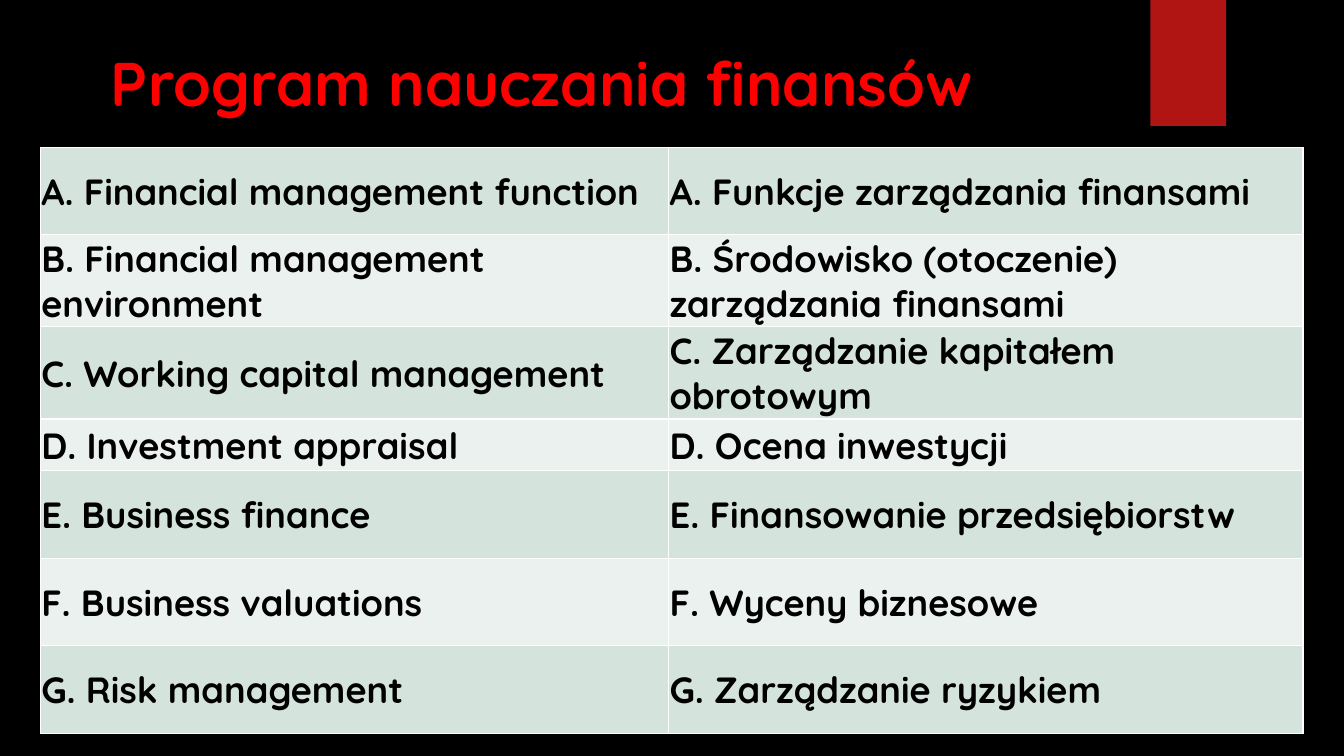
import pptx
import pptx.util
import pptx.dml.color
import pptx.enum.shapes
import pptx.enum.text
import pptx.oxml
import pptx.oxml.ns

Pt = pptx.util.Pt
COLORS = {"black": "000000", "title": "FF0000", "tab": "B01513",
          "odd": "D4E3DB", "even": "EBF1EE", "border": "FFFFFF"}
FONT = "Quicksand"
TOPICS = [
    ("A. Financial management function", "A. Funkcje zarządzania finansami", 62.5),
    ("B. Financial management environment", "B. Środowisko (otoczenie) zarządzania finansami", 65.5),
    ("C. Working capital management", "C. Zarządzanie kapitałem obrotowym", 65.5),
    ("D. Investment appraisal", "D. Ocena inwestycji", 37),
    ("E. Business finance", "E. Finansowanie przedsiębiorstw", 62.5),
    ("F. Business valuations", "F. Wyceny biznesowe", 62.5),
    ("G. Risk management", "G. Zarządzanie ryzykiem", 62.5),
]


def rgb(name):
    return pptx.dml.color.RGBColor.from_string(COLORS[name])


def style(p, size, color):
    p.font.name = FONT
    p.font.size = Pt(size)
    p.font.bold = True
    p.font.color.rgb = rgb(color)


prs = pptx.Presentation()
prs.slide_width, prs.slide_height = Pt(960), Pt(540)
s = prs.slides.add_slide(prs.slide_layouts[5])
s.background.fill.solid()
s.background.fill.fore_color.rgb = rgb("black")

sp = s.shapes.add_shape(pptx.enum.shapes.MSO_SHAPE.RECTANGLE,
                        Pt(821.8), Pt(0), Pt(54), Pt(90))
sp.shadow.inherit = False
sp.fill.solid()
sp.fill.fore_color.rgb = rgb("tab")
sp.line.fill.background()

title = s.shapes.title
title.left, title.top, title.width, title.height = Pt(72), Pt(22), Pt(816), Pt(73.5)
tf = title.text_frame
tf.text = "Program nauczania finansów"
tf.vertical_anchor = pptx.enum.text.MSO_ANCHOR.MIDDLE
p = tf.paragraphs[0]
p.alignment = pptx.enum.text.PP_ALIGN.LEFT
style(p, 44, "title")

height = sum(topic[2] for topic in TOPICS)
table = s.shapes.add_table(len(TOPICS), 2, Pt(28.8), Pt(105.2), Pt(902), Pt(height)).table
table.first_row = False
table.horz_banding = False
table.columns[0].width, table.columns[1].width = Pt(448.8), Pt(453.2)

for i, (english, polish, row_height) in enumerate(TOPICS):
    table.rows[i].height = Pt(row_height)
    for j, text in enumerate((english, polish)):
        cell = table.cell(i, j)
        cell.text = text
        cell.vertical_anchor = pptx.enum.text.MSO_ANCHOR.MIDDLE
        cell.margin_left = cell.margin_right = cell.margin_top = Pt(0.7)
        cell.margin_bottom = Pt(0)
        style(cell.text_frame.paragraphs[0], 26, "black")
        tcPr = cell._tc.get_or_add_tcPr()
        for side in ("lnL", "lnR", "lnT", "lnB"):
            tcPr.append(pptx.oxml.parse_xml(
                f'<a:{side} {pptx.oxml.ns.nsdecls("a")} w="12700"><a:solidFill>'
                f'<a:srgbClr val="{COLORS["border"]}"/></a:solidFill></a:{side}>'))
        cell.fill.solid()
        cell.fill.fore_color.rgb = rgb("even" if i % 2 else "odd")

prs.save("out.pptx")
